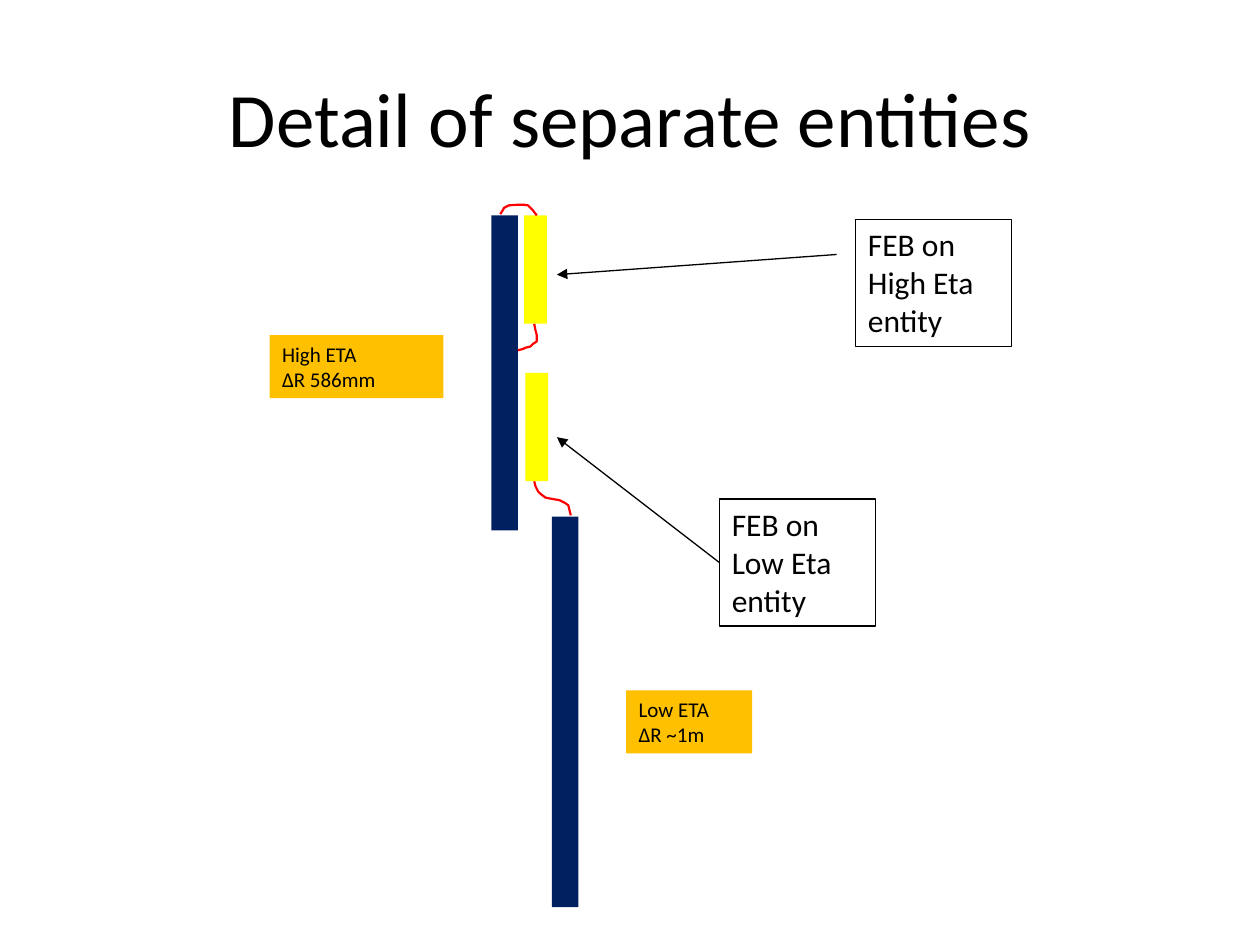
from lxml.etree import SubElement
from pptx import Presentation
from pptx.dml.color import RGBColor
from pptx.enum.shapes import MSO_CONNECTOR, MSO_SHAPE
from pptx.enum.text import MSO_ANCHOR, PP_ALIGN
from pptx.oxml.ns import qn
from pptx.util import Inches, Pt

WIDTH, HEIGHT = Inches(10), Inches(7.5)
COLUMN, ROW = WIDTH / 100, HEIGHT / 75
NAVY, YELLOW, AMBER, RED, BLACK = "002060", "FFFF00", "FFC000", "FF0000", "000000"

BARS = [
    (39, 17.1, 2.1, 25, NAVY),
    (43.8, 41, 2.1, 31, NAVY),
    (41.6, 17.1, 1.8, 8.6, YELLOW),
    (41.7, 29.6, 1.8, 8.6, YELLOW),
]
WIRES = [
    [(42.4, 38.2), (42.5, 38.6), (42.7, 39), (42.9, 39.2), (43.3, 39.5),
     (43.8, 39.6), (44.4, 39.7), (44.8, 39.9), (45.1, 40.1), (45.2, 40.5), (45.3, 40.9)],
    [(42.4, 25.7), (42.5, 26.2), (42.6, 26.6), (42.6, 27.1), (42.3, 27.3),
     (42.1, 27.5), (41.7, 27.6), (41.5, 27.7), (41.1, 27.8)],
    [(42.6, 17.1), (42.3, 16.7), (41.9, 16.3), (41.6, 16.25), (41.1, 16.25),
     (40.4, 16.3), (40, 16.5), (39.9, 16.7), (39.7, 17)],
]


def color(value):
    return RGBColor.from_string(value)


def place(column, row):
    return round(column * COLUMN), round(row * ROW)


def write(paragraph, text, size):
    paragraph.text = text
    paragraph.font.name = "Calibri"
    paragraph.font.size = Pt(size)
    paragraph.font.color.rgb = color(BLACK)


def set_title(page, text):
    title = page.shapes.title
    title.left, title.top = place(5, 3)
    title.width, title.height = place(90, 12.5)
    title.text_frame.vertical_anchor = MSO_ANCHOR.MIDDLE
    paragraph = title.text_frame.paragraphs[0]
    write(paragraph, text, 44)
    paragraph.alignment = PP_ALIGN.CENTER


def add_bar(group, column, row, columns, rows, fill):
    bar = group.shapes.add_shape(
        MSO_SHAPE.RECTANGLE, *place(column, row), *place(columns, rows))
    bar.shadow.inherit = False
    bar.fill.solid()
    bar.fill.fore_color.rgb = color(fill)
    bar.line.fill.background()


def add_wire(group, points):
    start, *rest = [place(*point) for point in points]
    builder = group.shapes.build_freeform(*start)
    builder.add_line_segments(rest, close=False)
    wire = builder.convert_to_shape()
    wire.shadow.inherit = False
    wire.fill.background()
    wire.line.color.rgb = color(RED)
    wire.line.width = Pt(1.25)


def add_label(page, column, row, columns, rows, lines, size, fill=None):
    box = page.shapes.add_textbox(*place(column, row), *place(columns, rows))
    if fill:
        box.fill.solid()
        box.fill.fore_color.rgb = color(fill)
    else:
        box.line.color.rgb = color(BLACK)
        box.line.width = Pt(0.75)
    frame = box.text_frame
    frame.word_wrap = True
    for index, line in enumerate(lines):
        paragraph = frame.add_paragraph() if index else frame.paragraphs[0]
        write(paragraph, line, size)
    return box


def add_arrow(page, start, end):
    arrow = page.shapes.add_connector(
        MSO_CONNECTOR.STRAIGHT, *place(*start), *place(*end))
    arrow.line.color.rgb = color(BLACK)
    arrow.line.width = Pt(0.75)
    SubElement(arrow.line._get_or_add_ln(), qn("a:tailEnd"), type="triangle")
    SubElement(arrow._element.spPr, qn("a:effectLst"))
    return arrow


def main():
    deck = Presentation()
    deck.slide_width, deck.slide_height = WIDTH, HEIGHT
    page = deck.slides.add_slide(deck.slide_layouts[5])
    set_title(page, "Detail of separate entities")

    detector = page.shapes.add_group_shape()
    for bar in BARS:
        add_bar(detector, *bar)
    for points in WIRES:
        add_wire(detector, points)

    add_label(page, 21.4, 26.6, 13.8, 5, ["High ETA", "∆R 586mm"], 12, AMBER)
    add_label(page, 49.7, 54.8, 10, 5, ["Low ETA", "∆R ~1m"], 12, AMBER)
    low_board = add_label(page, 57.1, 39.6, 12.4, 10.1, ["FEB on Low Eta entity"], 18)
    add_label(page, 67.9, 17.4, 12.4, 10.1, ["FEB on High Eta entity"], 18)

    add_arrow(page, (66.4, 20.2), (44.2, 21.8))
    low_arrow = add_arrow(page, (57.1, 44.6), (44.2, 34.7))
    low_arrow.begin_connect(low_board, 1)
    deck.save("out.pptx")


if __name__ == "__main__":
    main()
